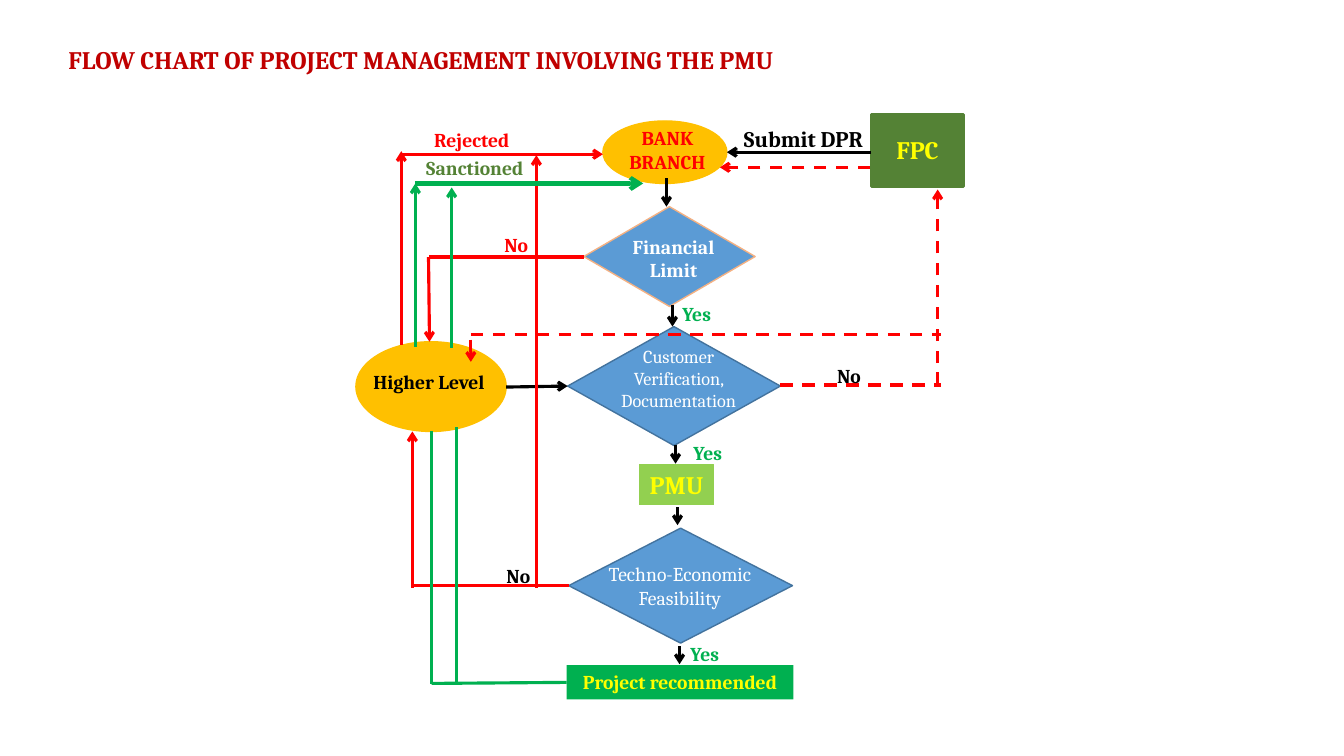
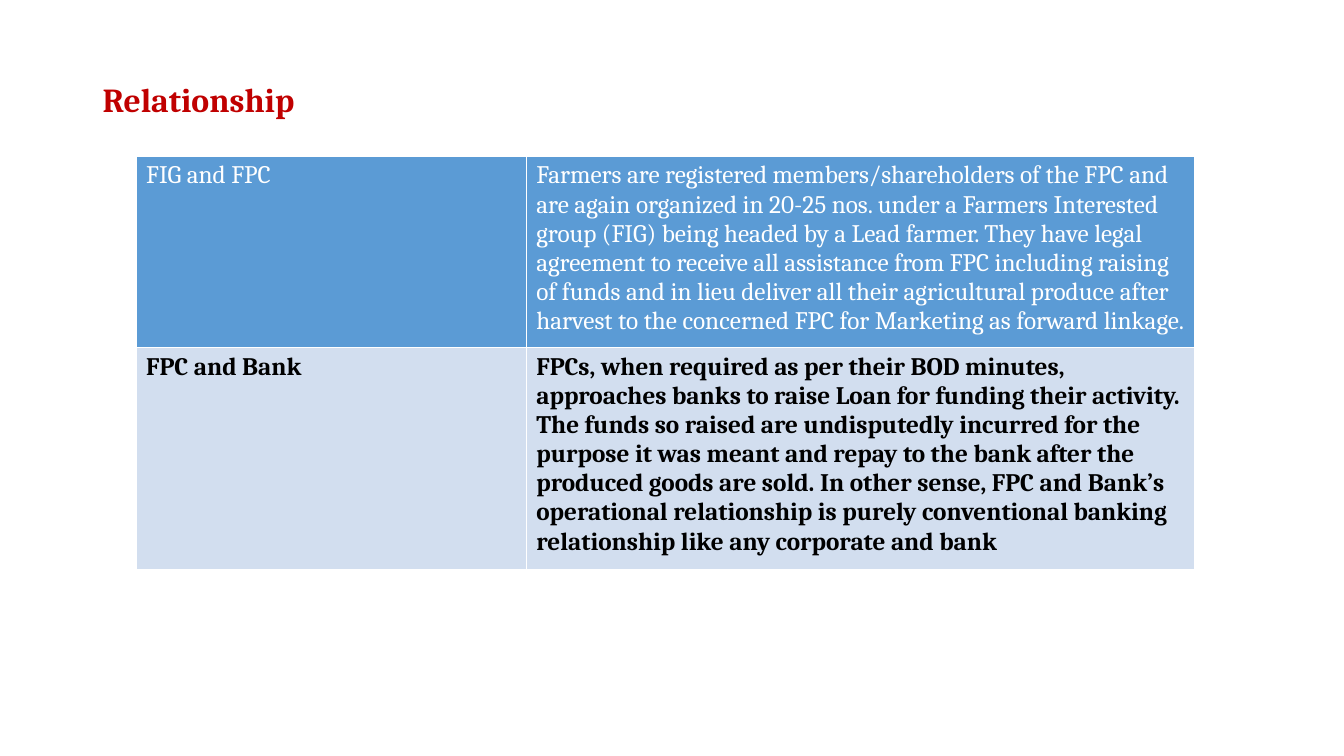
from lxml import etree
from pptx import Presentation
from pptx.dml.color import RGBColor
from pptx.enum import dml, shapes, text
from pptx.oxml import ns
from pptx.util import Emu, Pt

PX = 9144  # 100 px to the inch
FONT = "Cambria"
BLACK, WHITE, YELLOW = "000000", "FFFFFF", "FFFF00"
RED, GREEN, MOSS, LIME = "FF0000", "00B050", "548235", "92D050"
TITLE, AMBER, BLUE, NAVY = "C00000", "FFC000", "5B9BD5", "43739E"
PEACH, PALE = "F4B183", "D2DEEF"

ELLIPSE = shapes.MSO_SHAPE.OVAL
DIAMOND = shapes.MSO_SHAPE.DIAMOND
RECT = shapes.MSO_SHAPE.RECTANGLE
LEFT, CENTER = text.PP_ALIGN.LEFT, text.PP_ALIGN.CENTER

# Nodes: preset, box, fill, line colour, line width
NODES = [
    (ELLIPSE, (248, 20, 123, 62), AMBER, AMBER, 1),
    (DIAMOND, (229, 105, 170, 99), BLUE, PEACH, 1),
    (DIAMOND, (213, 224, 211, 118), BLUE, NAVY, 1),
    (ELLIPSE, (3, 239, 149, 89), AMBER, AMBER, 1),
    (RECT, (284, 361, 74, 40), LIME, LIME, 0.75),
    (DIAMOND, (214, 424, 222, 114), BLUE, NAVY, 1),
    (RECT, (514, 14, 92, 71), MOSS, MOSS, 2.25),
    (RECT, (212, 560, 225, 34), GREEN, None, 0),
]

# Labels: words, box, size, colour, bold
LABELS = [
    ("BANK BRANCH", (251, 20, 122, 57), 14, RED, True),
    ("Financial Limit", (264, 128, 108, 57), 14, WHITE, True),
    ("Customer Verification, Documentation", (234, 238, 178, 76), 13, WHITE, False),
    ("Higher Level", (7, 262, 137, 34), 14, BLACK, True),
    ("PMU", (274, 361, 94, 40), 18, YELLOW, True),
    ("Techno-Economic Feasibility", (223, 453, 203, 57), 14, WHITE, False),
    ("FPC", (517, 28, 86, 40), 18, YELLOW, True),
    ("Project recommended", (212, 560, 225, 34), 14, YELLOW, True),
    ("Submit DPR", (365, 19, 164, 37), 16, BLACK, True),
    ("Rejected", (66, 22, 104, 34), 14, RED, True),
    ("Sanctioned", (60, 50, 122, 34), 14, MOSS, True),
    ("No", (123, 126, 78, 34), 14, RED, True),
    ("No", (453, 256, 78, 34), 14, BLACK, True),
    ("No", (125, 455, 78, 34), 14, BLACK, True),
    ("Yes", (310, 195, 62, 34), 14, GREEN, True),
    ("Yes", (321, 333, 62, 34), 14, GREEN, True),
    ("Yes", (318, 532, 62, 34), 14, GREEN, True),
]

# Links: start, end, colour, then any of "arrow", "dash", "thick"
LINKS = [
    # Main path downwards, and its entries from the sides
    ((311, 77), (311, 105), BLACK, "arrow"),
    ((317, 203), (317, 224), BLACK, "arrow"),
    ((320, 341), (320, 360), BLACK, "arrow"),
    ((322, 403), (322, 421), BLACK, "arrow"),
    ((324, 541), (324, 559), BLACK, "arrow"),
    ((152, 284), (213, 283), BLACK, "arrow"),
    ((514, 51), (371, 51), BLACK, "arrow"),
    # Financial limit exceeded
    ((229, 155), (75, 155), RED),
    ((75, 155), (76, 239), RED, "arrow"),
    # Verification failed, back to the FPC and higher level
    ((424, 282), (583, 282), RED, "dash"),
    ((580, 282), (580, 88), RED, "dash", "arrow"),
    ((513, 66), (364, 66), RED, "dash", "arrow"),
    ((117, 232), (583, 232), RED, "dash"),
    ((117, 237), (117, 259), RED, "arrow"),
    # Not feasible, rejected
    ((214, 481), (59, 481), RED),
    ((59, 483), (59, 328), RED, "arrow"),
    ((182, 483), (182, 54), RED, "arrow"),
    ((48, 242), (48, 50), RED, "arrow"),
    ((48, 53), (248, 53), RED, "arrow"),
    # Recommended, sanctioned
    ((212, 577), (78, 578), GREEN),
    ((78, 328), (78, 579), GREEN),
    ((103, 324), (103, 578), GREEN),
    ((62, 244), (62, 82), GREEN, "arrow"),
    ((98, 245), (98, 86), GREEN, "arrow"),
    ((62, 82), (288, 82), GREEN, "arrow", "thick"),
]

RELATIONS = [
    ("FIG and FPC",
     "Farmers are registered members/shareholders of the FPC and are again "
     "organized in 20-25 nos. under a Farmers Interested group (FIG) being "
     "headed by a Lead farmer. They have legal agreement to receive all "
     "assistance from FPC including raising of funds and in lieu deliver all "
     "their agricultural produce after harvest to the concerned FPC for "
     "Marketing as forward linkage."),
    ("FPC and Bank",
     "FPCs, when required as per their BOD minutes, approaches banks to raise "
     "Loan for funding their activity. The funds so raised are undisputedly "
     "incurred for the purpose it was meant and repay to the bank after the "
     "produced goods are sold. In other sense, FPC and Bank’s operational "
     "relationship is purely conventional banking relationship like any "
     "corporate and bank"),
]


def px(*lengths):
    return [Emu(length * PX) for length in lengths]


def color(value):
    return RGBColor.from_string(value)


def shift(box, left, top):
    return (box[0] + left, box[1] + top, *box[2:])


def write(frame, words, size, ink, bold, align=LEFT):
    frame.word_wrap = True
    para = frame.paragraphs[0]
    para.alignment = align
    span = para.add_run()
    span.text = words
    span.font.name = FONT
    span.font.size = Pt(size)
    span.font.bold = bold
    span.font.color.rgb = color(ink)
    return para


def add_label(page, words, box, size, ink, bold, align=CENTER):
    frame = page.shapes.add_textbox(*px(*box)).text_frame
    return write(frame, words, size, ink, bold, align)


def add_title(page, words, box, size):
    return add_label(page, words, box, size, TITLE, True, LEFT)


def add_node(page, preset, box, fill, outline, width):
    node = page.shapes.add_shape(preset, *px(*box))
    node.shadow.inherit = False
    node.fill.solid()
    node.fill.fore_color.rgb = color(fill)
    if outline:
        node.line.color.rgb = color(outline)
        node.line.width = Pt(width)
    else:
        node.line.fill.background()


def add_link(page, start, end, ink, *marks):
    link = page.shapes.add_connector(
        shapes.MSO_CONNECTOR.STRAIGHT, *px(*start, *end))
    link.line.color.rgb = color(ink)
    link.line.width = Pt(3 if "thick" in marks else 2.25)
    if "dash" in marks:
        link.line.dash_style = dml.MSO_LINE.DASH
    if "arrow" in marks:
        etree.SubElement(link.line._get_or_add_ln(), ns.qn("a:tailEnd"), type="arrow")
    etree.SubElement(link._element.spPr, ns.qn("a:effectLst"))


def add_flow_chart(page, left, top):
    for preset, box, *style in NODES:
        add_node(page, preset, shift(box, left, top), *style)
    for start, end, *style in LINKS:
        add_link(page, shift(start, left, top), shift(end, left, top), *style)
    for words, box, *style in LABELS:
        add_label(page, words, shift(box, left, top), *style)


def add_borders(cell):
    props = cell._tc.get_or_add_tcPr()
    for index, side in enumerate(("lnL", "lnR", "lnT", "lnB")):
        edge = etree.Element(ns.qn(f"a:{side}"), w=str(Pt(1)))
        paint = etree.SubElement(edge, ns.qn("a:solidFill"))
        etree.SubElement(paint, ns.qn("a:srgbClr"), val=WHITE)
        props.insert(index, edge)


def add_relation_table(page, left, top, widths, heights):
    table = page.shapes.add_table(
        len(heights), len(widths),
        *px(left, top, sum(widths), sum(heights))).table
    for column, width in zip(table.columns, px(*widths)):
        column.width = width
    for row, height in zip(table.rows, px(*heights)):
        row.height = height
    # Light words on blue in the first row, bold black on pale below
    styles = [(BLUE, WHITE, False), (PALE, BLACK, True)]
    for row, entries, (fill, ink, bold) in zip(table.rows, RELATIONS, styles):
        for cell, words in zip(row.cells, entries):
            cell.fill.solid()
            cell.fill.fore_color.rgb = color(fill)
            write(cell.text_frame, words, 18, ink, bold)
            add_borders(cell)


def build_flow_page(page):
    add_title(page, "FLOW CHART OF PROJECT MANAGEMENT INVOLVING THE PMU",
              (58, 39, 777, 40), 18)
    add_flow_chart(page, 350, 100)


def build_relation_page(page):
    para = add_title(page, "Relationship", (92, 78, 1150, 47), 24)
    para.line_spacing = 0.9
    add_relation_table(page, 135, 155, (387, 663), (183, 212))


def main():
    deck = Presentation()
    deck.slide_width, deck.slide_height = px(1333, 750)
    for build in (build_flow_page, build_relation_page):
        build(deck.slides.add_slide(deck.slide_layouts[6]))
    deck.save("out.pptx")


if __name__ == "__main__":
    main()
